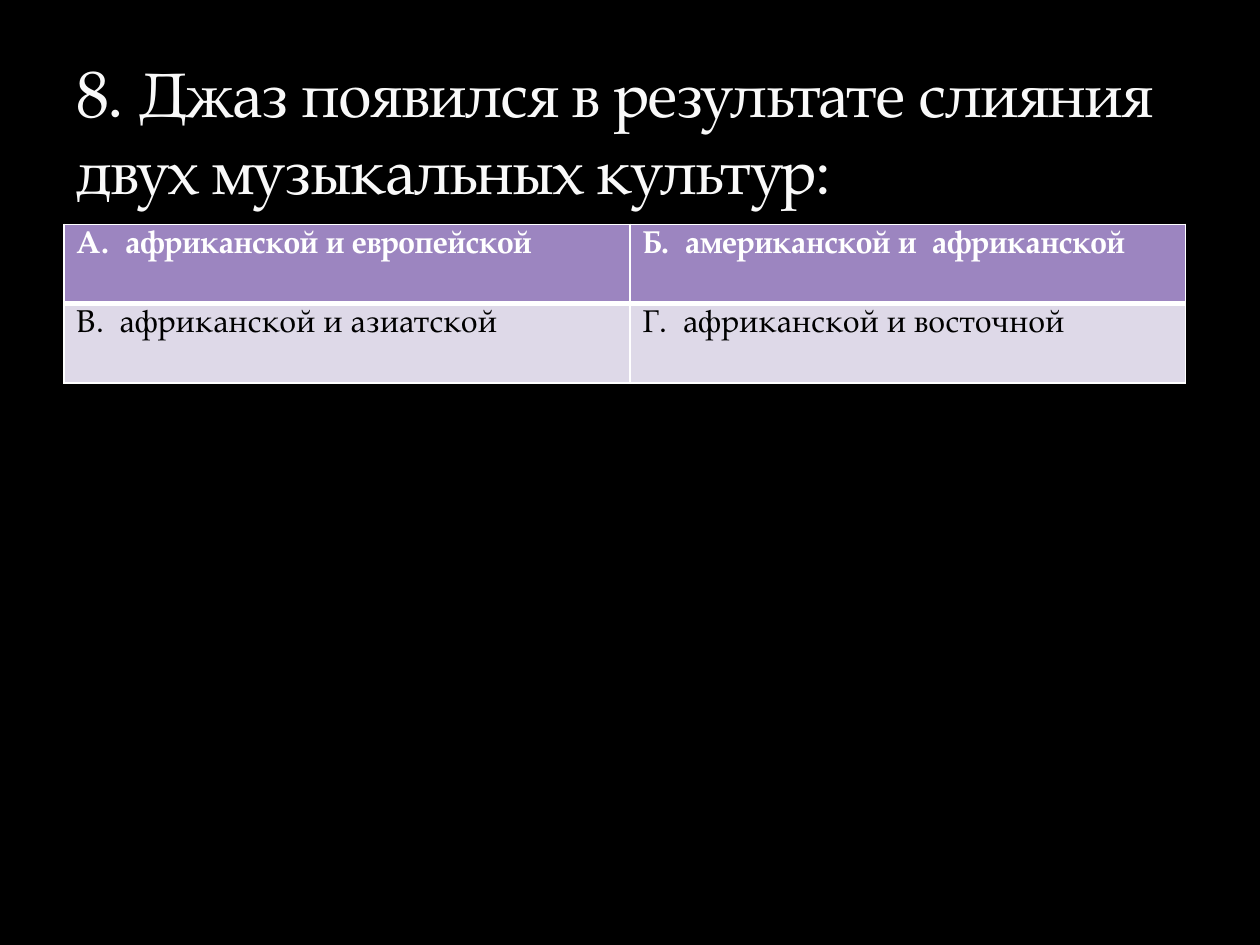
from lxml import etree
from pptx import Presentation
from pptx.dml.color import RGBColor
from pptx.enum.text import MSO_ANCHOR
from pptx.oxml.ns import qn
from pptx.util import Inches, Pt

BOTTOM = MSO_ANCHOR.BOTTOM
FONT = "TeX Gyre Pagella"
BLACK = RGBColor(0x00, 0x00, 0x00)
WHITE = RGBColor(0xFF, 0xFF, 0xFF)
TITLE_WHITE = RGBColor(0xF9, 0xF9, 0xF9)
PURPLE = RGBColor(0x9C, 0x85, 0xC0)
LILAC = RGBColor(0xDE, 0xD9, 0xE8)

TITLE_RUNS = [
    ("8. ", 37.8),
    ("Джаз появился в результате слияния двух музыкальных культур:", 36),
]
ANSWERS = [
    ("A.  африканской и европейской", "Б.  американской и  африканской"),
    ("B.  африканской и азиатской", "Г.  африканской и восточной"),
]
ROW_STYLES = [
    {"fill": PURPLE, "color": WHITE, "bold": True, "top": 1, "bottom": 3},
    {"fill": LILAC, "color": BLACK, "bold": False, "top": 3, "bottom": 1},
]
LEFT = 0.51
TITLE_TOP, TITLE_WIDTH, TITLE_HEIGHT = 0.36, 9, 1.33
TABLE_TOP, ROW_HEIGHT = 1.78, 0.63
COLUMN_WIDTHS = [4.49, 4.41]


def add_run(paragraph, text, size, color, bold=False):
    run = paragraph.add_run()
    run.text = text
    run.font.name = FONT
    run.font.size = Pt(size)
    run.font.color.rgb = color
    run.font.bold = bold
    return run


def add_border(cell, side, width):
    properties = cell._tc.get_or_add_tcPr()
    line = etree.SubElement(properties, qn(f"a:ln{side}"), w=str(Pt(width)))
    fill = etree.SubElement(line, qn("a:solidFill"))
    etree.SubElement(fill, qn("a:srgbClr"), val=str(WHITE))


def add_title(slide):
    title = slide.shapes.add_textbox(
        Inches(LEFT), Inches(TITLE_TOP), Inches(TITLE_WIDTH), Inches(TITLE_HEIGHT))
    frame = title.text_frame
    frame.word_wrap = True
    frame.vertical_anchor = BOTTOM
    for text, size in TITLE_RUNS:
        run = add_run(frame.paragraphs[0], text, size, TITLE_WHITE)
        run.font._element.set("spc", "-100")


def add_answers(slide):
    table = slide.shapes.add_table(
        len(ANSWERS), len(COLUMN_WIDTHS), Inches(LEFT), Inches(TABLE_TOP),
        Inches(sum(COLUMN_WIDTHS)), Inches(ROW_HEIGHT * len(ANSWERS))).table
    table.horz_banding = False
    for column, width in zip(table.columns, COLUMN_WIDTHS):
        column.width = Inches(width)
    for row, answers, style in zip(table.rows, ANSWERS, ROW_STYLES):
        row.height = Inches(ROW_HEIGHT)
        for cell, answer in zip(row.cells, answers):
            borders = {"L": 1, "R": 1, "T": style["top"], "B": style["bottom"]}
            for side, width in borders.items():
                add_border(cell, side, width)
            cell.fill.solid()
            cell.fill.fore_color.rgb = style["fill"]
            add_run(cell.text_frame.paragraphs[0], answer, 18,
                    style["color"], style["bold"])


def main():
    presentation = Presentation()
    presentation.slide_width = Inches(10)
    presentation.slide_height = Inches(7.5)
    slide = presentation.slides.add_slide(presentation.slide_layouts[6])
    slide.background.fill.solid()
    slide.background.fill.fore_color.rgb = BLACK
    add_answers(slide)
    add_title(slide)
    presentation.save("out.pptx")


if __name__ == "__main__":
    main()
